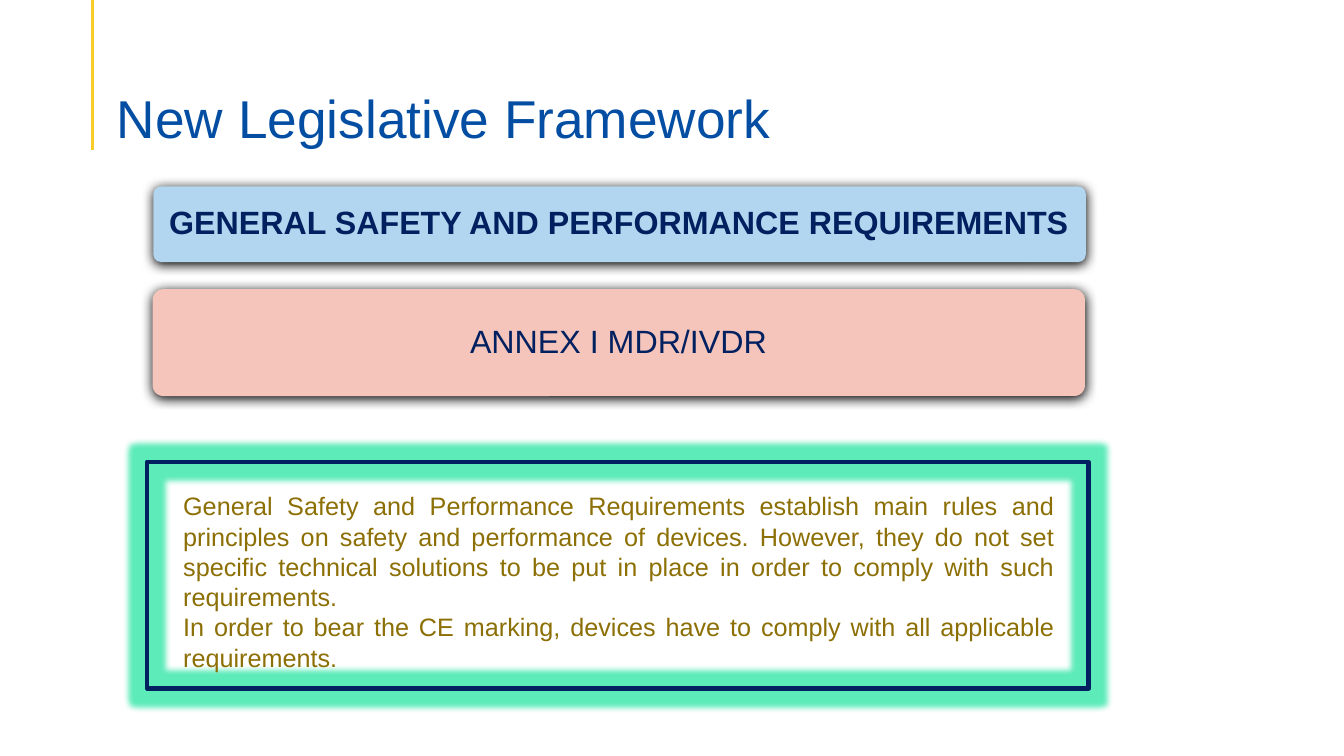
"""Build the slide on the general safety and performance requirements."""
from dataclasses import dataclass

from lxml.etree import SubElement
from pptx import Presentation
from pptx.dml.color import RGBColor
from pptx.enum.shapes import MSO_CONNECTOR, MSO_SHAPE
from pptx.enum.text import MSO_ANCHOR, MSO_AUTO_SIZE, PP_ALIGN
from pptx.oxml.ns import qn
from pptx.slide import Slide
from pptx.util import Pt

FONT = "Arial"
WHITE = RGBColor(0xFF, 0xFF, 0xFF)
BLACK = RGBColor(0x00, 0x00, 0x00)
YELLOW = RGBColor(0xF8, 0xCC, 0x29)
TITLE_BLUE = RGBColor(0x03, 0x4E, 0xA2)
NAVY = RGBColor(0x00, 0x20, 0x60)
PALE_BLUE = RGBColor(0xB2, 0xD6, 0xF0)
PINK = RGBColor(0xF5, 0xC4, 0xBA)
OCHRE = RGBColor(0x8C, 0x6F, 0x05)
MINT = RGBColor(0x5D, 0xEB, 0xBA)


@dataclass(frozen=True)
class Banner:
    text: str
    left: float
    top: float
    height: float
    fill: RGBColor
    bold: bool


BANNERS = [
    Banner("GENERAL SAFETY AND PERFORMANCE REQUIREMENTS", 109.6, 133.2, 54, PALE_BLUE, True),
    Banner("ANNEX I MDR/IVDR", 109, 206.6, 76.3, PINK, False),
]
EXPLANATION = [
    "General Safety and Performance Requirements establish main rules and principles on safety "
    "and performance of devices. However, they do not set specific technical solutions to be put "
    "in place in order to comply with such requirements.",
    "In order to bear the CE marking, devices have to comply with all applicable requirements.",
]


def add_text(paragraph, text: str, size: float, color: RGBColor, align, bold: bool = False) -> None:
    """Add one formatted run to a paragraph."""
    paragraph.alignment = align
    run = paragraph.add_run()
    run.text = text
    run.font.name = FONT
    run.font.size = Pt(size)
    run.font.bold = bold
    run.font.color.rgb = color


def add_effect(shape, effect: str, color: RGBColor, **settings: str) -> None:
    """Give a shape a single coloured effect."""
    shape.shadow.inherit = False
    effects = shape._element.spPr.find(qn("a:effectLst"))
    SubElement(SubElement(effects, qn(f"a:{effect}"), settings), qn("a:srgbClr"), val=str(color))


def add_title(slide: Slide) -> None:
    """Fill the title placeholder and draw the rule beside it."""
    rule = slide.shapes.add_connector(MSO_CONNECTOR.STRAIGHT, Pt(66.2), Pt(0), Pt(66.2), Pt(107.3))
    rule.line.color.rgb = YELLOW
    rule.line.width = Pt(2.25)
    SubElement(rule._element.spPr, qn("a:effectLst"))
    title = slide.shapes.title
    title.left, title.top, title.width, title.height = Pt(76.3), Pt(45.4), Pt(807.8), Pt(61.9)
    frame = title.text_frame
    frame.word_wrap = True
    frame.auto_size = MSO_AUTO_SIZE.NONE
    frame.vertical_anchor = MSO_ANCHOR.BOTTOM
    frame.margin_bottom = Pt(0)
    frame.paragraphs[0].line_spacing = 0.9
    add_text(frame.paragraphs[0], "New Legislative Framework", 38, TITLE_BLUE, PP_ALIGN.LEFT)


def add_banner(slide: Slide, banner: Banner) -> None:
    """Draw a rounded, shadowed banner with its heading."""
    shape = slide.shapes.add_shape(
        MSO_SHAPE.ROUNDED_RECTANGLE, Pt(banner.left), Pt(banner.top), Pt(666), Pt(banner.height))
    shape.adjustments[0] = 0.1
    shape.fill.solid()
    shape.fill.fore_color.rgb = banner.fill
    shape.line.fill.background()
    add_effect(shape, "outerShdw", BLACK, blurRad=str(Pt(8.5)), dist=str(Pt(1)),
               dir="5400000", algn="ctr", rotWithShape="0")
    frame = shape.text_frame
    frame.word_wrap = True
    frame.vertical_anchor = MSO_ANCHOR.MIDDLE
    frame.margin_left = frame.margin_right = Pt(7.2)
    frame.paragraphs[0].line_spacing = 0.9
    add_text(frame.paragraphs[0], banner.text, 23, NAVY, PP_ALIGN.CENTER, banner.bold)


def add_explanation(slide: Slide) -> None:
    """Draw the glowing border and the paragraphs inside it."""
    border = slide.shapes.add_shape(MSO_SHAPE.RECTANGLE, Pt(105.1), Pt(329.8), Pt(672.5), Pt(162))
    border.fill.background()
    border.line.color.rgb = NAVY
    border.line.width = Pt(3)
    add_effect(border, "glow", MINT, rad=str(Pt(8)))
    explanation = slide.shapes.add_textbox(Pt(123.8), Pt(347), Pt(636.5), Pt(138.2))
    frame = explanation.text_frame
    frame.word_wrap = True
    for index, text in enumerate(EXPLANATION):
        paragraph = frame.add_paragraph() if index else frame.paragraphs[0]
        add_text(paragraph, text, 18, OCHRE, PP_ALIGN.JUSTIFY)


def main() -> None:
    """Build and save the presentation."""
    presentation = Presentation()
    presentation.slide_width, presentation.slide_height = Pt(960), Pt(540)
    slide = presentation.slides.add_slide(presentation.slide_layouts[5])
    slide.background.fill.solid()
    slide.background.fill.fore_color.rgb = WHITE
    add_title(slide)
    for banner in BANNERS:
        add_banner(slide, banner)
    add_explanation(slide)
    presentation.save("out.pptx")


if __name__ == "__main__":
    main()
